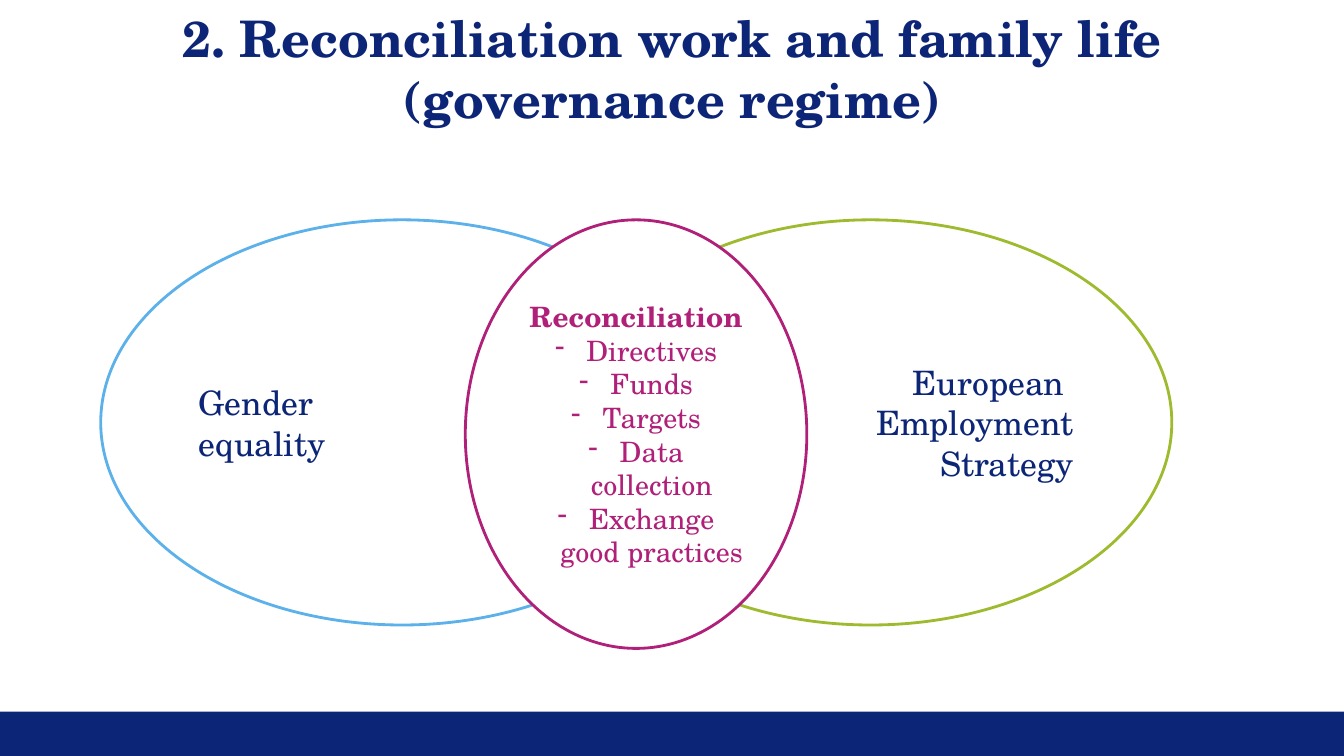
import dataclasses
import typing

import lxml.etree
import pptx
import pptx.dml.color
import pptx.enum.shapes
import pptx.enum.text
import pptx.oxml.ns
import pptx.util

Cm = pptx.util.Cm
Align = pptx.enum.text.PP_ALIGN
Preset = pptx.enum.shapes.MSO_SHAPE

FONT = "TeX Gyre Schola"
COLORS = {
    "navy": "0C2577",
    "white": "FFFFFF",
    "sky": "5CB1EB",
    "green": "9EBA2E",
    "magenta": "B02079",
}
POLICY_WIDTH, POLICY_HEIGHT = 15.19, 10.21
ELLIPSE_TOP = 5.54
BULLET_INDENT = Cm(0.79)


@dataclasses.dataclass
class PolicyArea:
    left: float
    width: float
    height: float
    outline: str
    lines: list[str]
    text_color: str = "navy"
    size: int = 24
    align: Align = Align.LEFT
    fill: typing.Optional[str] = "white"
    headed_list: bool = False


AREAS = [
    PolicyArea(2.54, POLICY_WIDTH, POLICY_HEIGHT, "sky", ["Gender", "equality"]),
    PolicyArea(14.35, POLICY_WIDTH, POLICY_HEIGHT, "green",
               ["European ", "Employment", "Strategy"],
               align=Align.RIGHT, fill=None),
    PolicyArea(11.73, 8.61, 10.8, "magenta",
               ["Reconciliation", "Directives", "Funds", "Targets",
                "Data collection", "Exchange good practices"],
               text_color="magenta", size=20, align=Align.CENTER, headed_list=True),
]


def rgb(name: str) -> pptx.dml.color.RGBColor:
    return pptx.dml.color.RGBColor.from_string(COLORS[name])


def format_paragraph(paragraph, size: int, color: str, align: Align, bold: bool) -> None:
    paragraph.alignment = align
    paragraph.line_spacing = 1.0
    for run in paragraph.runs:
        run.font.name = FONT
        run.font.size = pptx.util.Pt(size)
        run.font.bold = bold
        run.font.color.rgb = rgb(color)


def add_dash(paragraph) -> None:
    properties = paragraph._p.get_or_add_pPr()
    properties.set("marL", str(BULLET_INDENT))
    properties.set("indent", str(-BULLET_INDENT))
    dash = lxml.etree.SubElement(properties, pptx.oxml.ns.qn("a:buChar"))
    dash.set("char", "-")


def add_area(slide, area: PolicyArea) -> None:
    ellipse = slide.shapes.add_shape(
        Preset.OVAL, Cm(area.left), Cm(ELLIPSE_TOP), Cm(area.width), Cm(area.height))
    ellipse.shadow.inherit = False
    if area.fill:
        ellipse.fill.solid()
        ellipse.fill.fore_color.rgb = rgb(area.fill)
    else:
        ellipse.fill.background()
    ellipse.line.color.rgb = rgb(area.outline)
    ellipse.line.width = pptx.util.Pt(2)

    frame = ellipse.text_frame
    frame.word_wrap = True
    frame.vertical_anchor = pptx.enum.text.MSO_ANCHOR.MIDDLE
    frame.text = "\n".join(area.lines)
    for index, paragraph in enumerate(frame.paragraphs):
        is_heading = area.headed_list and index == 0
        if area.headed_list and not is_heading:
            add_dash(paragraph)
        format_paragraph(paragraph, area.size, area.text_color, area.align, is_heading)


def add_title(slide, text: str) -> None:
    title = slide.shapes.title
    title.left, title.top, title.width, title.height = (
        Cm(1.12), Cm(1.12), Cm(31.65), Cm(1.19))
    frame = title.text_frame
    frame.margin_left = frame.margin_right = frame.margin_top = frame.margin_bottom = 0
    frame.word_wrap = True
    frame.auto_size = pptx.enum.text.MSO_AUTO_SIZE.NONE
    frame.vertical_anchor = pptx.enum.text.MSO_ANCHOR.MIDDLE
    frame.text = text
    format_paragraph(frame.paragraphs[0], 36, "navy", Align.CENTER, True)


def add_footer_bar(slide, width: int) -> None:
    bar = slide.shapes.add_shape(Preset.RECTANGLE, 0, Cm(17.93), width, Cm(1.12))
    bar.shadow.inherit = False
    bar.fill.solid()
    bar.fill.fore_color.rgb = rgb("navy")
    bar.line.fill.background()


def main() -> None:
    deck = pptx.Presentation()
    deck.slide_width, deck.slide_height = Cm(33.88), Cm(19.05)
    slide = deck.slides.add_slide(deck.slide_layouts.get_by_name("Title Only"))

    # Footer bar and title
    add_footer_bar(slide, deck.slide_width)
    add_title(slide, "2. Reconciliation work and family life\v(governance regime)")

    # Overlapping policy areas
    for area in AREAS:
        add_area(slide, area)

    deck.save("out.pptx")


if __name__ == "__main__":
    main()
